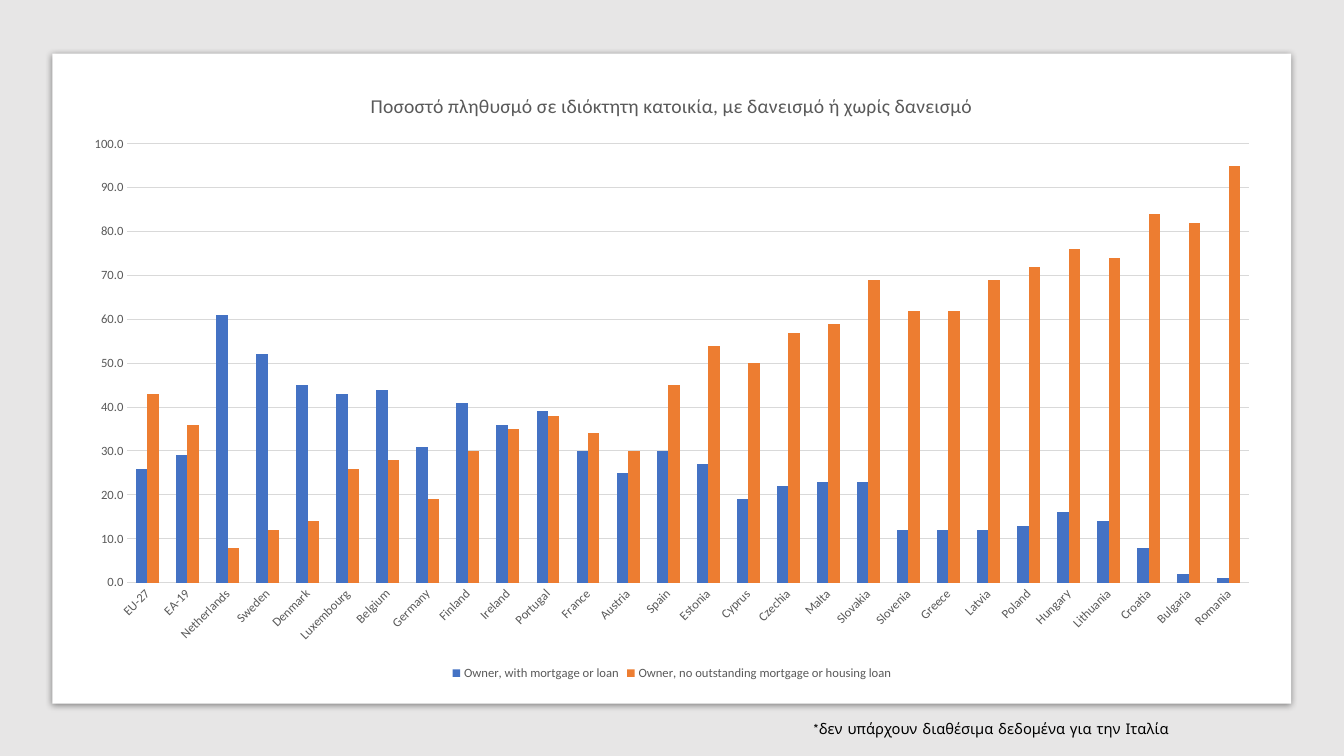
from lxml.etree import SubElement
from pptx import Presentation
from pptx.chart.data import CategoryChartData
from pptx.dml.color import RGBColor
from pptx.enum.chart import (XL_CHART_TYPE as ChartType, XL_LEGEND_POSITION as LegendPos,
                             XL_TICK_MARK as Tick)
from pptx.enum.shapes import MSO_SHAPE as Shape
from pptx.enum.text import MSO_AUTO_SIZE as AutoSize
from pptx.oxml.ns import qn
from pptx.util import Cm, Pt

BACKDROP = RGBColor(0xE7, 0xE6, 0xE6)
WHITE = RGBColor(0xFF, 0xFF, 0xFF)
BLACK = RGBColor(0x00, 0x00, 0x00)
GREY = RGBColor(0x59, 0x59, 0x59)
GRID = RGBColor(0xD9, 0xD9, 0xD9)
BLUE = RGBColor(0x44, 0x72, 0xC4)
ORANGE = RGBColor(0xED, 0x7D, 0x31)

TITLE = "Ποσοστό πληθυσμό σε ιδιόκτητη κατοικία, με δανεισμό ή χωρίς δανεισμό"
NOTE = "*δεν υπάρχουν διαθέσιμα δεδομένα για την Ιταλία"
SERIES = [("Owner, with mortgage or loan", BLUE),
          ("Owner, no outstanding mortgage or housing loan", ORANGE)]
# Country: percent with a loan, percent without
OWNERS = {
    "EU-27": (26, 43), "EA-19": (29, 36), "Netherlands": (61, 8), "Sweden": (52, 12),
    "Denmark": (45, 14), "Luxembourg": (43, 26), "Belgium": (44, 28), "Germany": (31, 19),
    "Finland": (41, 30), "Ireland": (36, 35), "Portugal": (39, 38), "France": (30, 34),
    "Austria": (25, 30), "Spain": (30, 45), "Estonia": (27, 54), "Cyprus": (19, 50),
    "Czechia": (22, 57), "Malta": (23, 59), "Slovakia": (23, 69), "Slovenia": (12, 62),
    "Greece": (12, 62), "Latvia": (12, 69), "Poland": (13, 72), "Hungary": (16, 76),
    "Lithuania": (14, 74), "Croatia": (8, 84), "Bulgaria": (2, 82), "Romania": (1, 95),
}


def style_font(font, size, color=GREY, name="Calibri"):
    font.size = Pt(size)
    font.name = name
    font.bold = False
    font.color.rgb = color


def add_rect(s, box, color):
    sp = s.shapes.add_shape(Shape.RECTANGLE, *box)
    sp.shadow.inherit = False
    sp.fill.solid()
    sp.fill.fore_color.rgb = color
    sp.line.fill.background()
    return sp


def add_panel(s, box):
    """White card with a soft shadow below it."""
    sp = add_rect(s, box, WHITE)
    effects = sp._element.spPr.find(qn("a:effectLst"))
    shadow = SubElement(effects, qn("a:outerShdw"), blurRad=str(Pt(5)), dist=str(Pt(1.4)),
                        dir="5400000", algn="t", rotWithShape="0")
    color = SubElement(shadow, qn("a:srgbClr"), val=str(BLACK))
    SubElement(color, qn("a:alpha"), val="43000")


def add_owner_chart(s, box):
    data = CategoryChartData(number_format="0.0")
    data.categories = list(OWNERS)
    for (name, _), values in zip(SERIES, zip(*OWNERS.values())):
        data.add_series(name, values)
    chart = s.shapes.add_chart(ChartType.COLUMN_CLUSTERED, *box, data).chart
    style_font(chart.font, 10, BLACK)

    # Title and legend
    chart.has_title = True
    r = chart.chart_title.text_frame.paragraphs[0].add_run()
    r.text = TITLE
    style_font(r.font, 14)
    chart.chart_title.include_in_layout = False
    chart.has_legend = True
    chart.legend.position = LegendPos.BOTTOM
    chart.legend.include_in_layout = False
    style_font(chart.legend.font, 9)

    # Columns
    plot = chart.plots[0]
    plot.gap_width = 150
    plot.overlap = 0
    plot.vary_by_categories = False
    for series, (_, color) in zip(plot.series, SERIES):
        series.format.fill.solid()
        series.format.fill.fore_color.rgb = color

    # Axes
    countries, percent = chart.category_axis, chart.value_axis
    for axis in (countries, percent):
        axis.major_tick_mark = axis.minor_tick_mark = Tick.NONE
        axis.format.line.fill.background()
        style_font(axis.tick_labels.font, 9)
    countries._element.find(qn("c:txPr")).find(qn("a:bodyPr")).set("rot", "-2700000")
    percent.minimum_scale, percent.maximum_scale, percent.major_unit = 0, 100, 10
    percent.tick_labels.number_format = "#,##0.0"
    percent.tick_labels.number_format_is_linked = False
    grid = percent.major_gridlines.format.line
    grid.color.rgb = GRID
    grid.width = Pt(0.75)


def add_note(s, box):
    tf = s.shapes.add_textbox(*box).text_frame
    tf.word_wrap = True
    tf.auto_size = AutoSize.SHAPE_TO_FIT_TEXT
    r = tf.paragraphs[0].add_run()
    r.text = NOTE
    style_font(r.font, 10.5, BLACK, "Comic Neue")


def main():
    prs = Presentation()
    prs.slide_width, prs.slide_height = Cm(33.87), Cm(19.05)
    s = prs.slides.add_slide(prs.slide_layouts[6])
    add_rect(s, (0, 0, prs.slide_width, prs.slide_height), BACKDROP)
    add_panel(s, (Cm(1.32), Cm(1.35), Cm(31.22), Cm(16.38)))
    add_owner_chart(s, (Cm(1.78), Cm(1.78), Cm(30.3), Cm(15.47)))
    add_note(s, (Cm(20.24), Cm(18.01), Cm(11.84), Cm(0.74)))
    prs.save("out.pptx")


if __name__ == "__main__":
    main()
